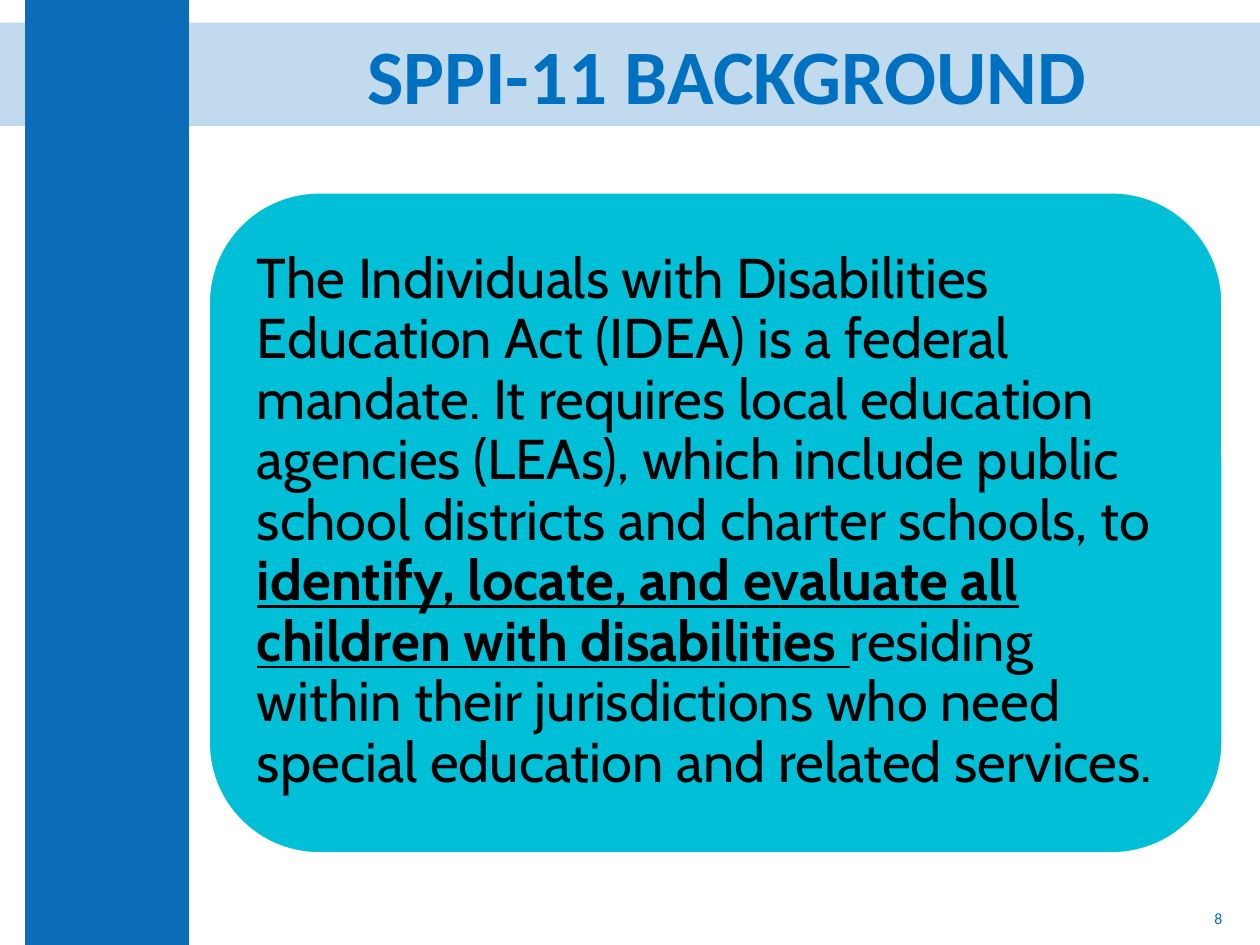
from dataclasses import dataclass

from lxml import etree
from pptx import Presentation
from pptx.dml.color import RGBColor
from pptx.enum.shapes import MSO_SHAPE
from pptx.enum.text import MSO_ANCHOR, PP_ALIGN
from pptx.oxml.ns import qn
from pptx.util import Inches, Pt

RECT, ROUND = MSO_SHAPE.RECTANGLE, MSO_SHAPE.ROUNDED_RECTANGLE
LEFT, MID, RIGHT = PP_ALIGN.LEFT, PP_ALIGN.CENTER, PP_ALIGN.RIGHT
CENTER = MSO_ANCHOR.MIDDLE


@dataclass(frozen=True)
class Theme:
    blue: str = "0D6CB9"
    title: str = "0070C0"
    card: str = "00BFD7"
    white: str = "FFFFFF"
    ink: str = "000000"
    head: int = 44
    body: int = 32
    note: int = 9


theme = Theme()

deck = Presentation()
deck.slide_width, deck.slide_height = Inches(10), Inches(7.5)
slide = deck.slides.add_slide(deck.slide_layouts[6])


def panel(kind, box, color):
    shape = slide.shapes.add_shape(kind, *map(Inches, box))
    shape.shadow.inherit = False
    shape.fill.solid()
    shape.fill.fore_color.rgb = RGBColor.from_string(color)
    shape.line.fill.background()
    return shape


def label(box, runs, face, size, color, align, pad=(0.1, 0.05)):
    """Add a one-paragraph text box; runs are (text, strong) pairs."""
    frame = slide.shapes.add_textbox(*map(Inches, box)).text_frame
    wide, high = map(Inches, pad)
    style = {"word_wrap": True, "vertical_anchor": CENTER,
             "margin_left": wide, "margin_right": wide,
             "margin_top": high, "margin_bottom": high}
    for name, value in style.items():
        setattr(frame, name, value)
    para = frame.paragraphs[0]
    para.alignment = align
    para.line_spacing = 0.9
    for text, strong in runs:
        run = para.add_run()
        run.text = text
        look = {"name": face, "size": Pt(size), "bold": strong}
        for name, value in look.items():
            setattr(run.font, name, value)
        run.font.color.rgb = RGBColor.from_string(color)
    return para


# Bands behind the content
band = panel(RECT, (0, 0.18, 10, 0.82), theme.blue)
tint = band.fill._xPr.find(".//" + qn("a:srgbClr"))
etree.SubElement(tint, qn("a:alpha"), val="25000")
panel(RECT, (0.2, 0, 1.3, 7.5), theme.blue)

# Page number and title
label((7.55, 7.1, 2.25, 0.4), [("8", False)],
      "Calibri", theme.note, theme.blue, RIGHT)
label((1.56, 0.22, 8.42, 0.82), [("SPPI-11 BACKGROUND", True)],
      "Calibri", theme.head, theme.title, MID)

# Card with the mandate
card = panel(ROUND, (1.66, 1.53, 8.04, 5.24), theme.card)
card.line.color.rgb = RGBColor.from_string(theme.white)
card.line.width = Pt(1)
mandate = [
    ("The Individuals with Disabilities Education Act (IDEA) is a federal "
     "mandate. It requires local education agencies (LEAs), which include "
     "public school districts and charter schools, to ", False),
    ("identify, locate, and evaluate all children with disabilities ", True),
    ("residing within their jurisdictions who need special education and "
     "related services.", False),
]
para = label((1.91, 1.78, 7.53, 4.73), mandate,
             "Cabin", theme.body, theme.ink, LEFT, (0.13, 0.13))
para.runs[1].font.underline = True

deck.save("out.pptx")
